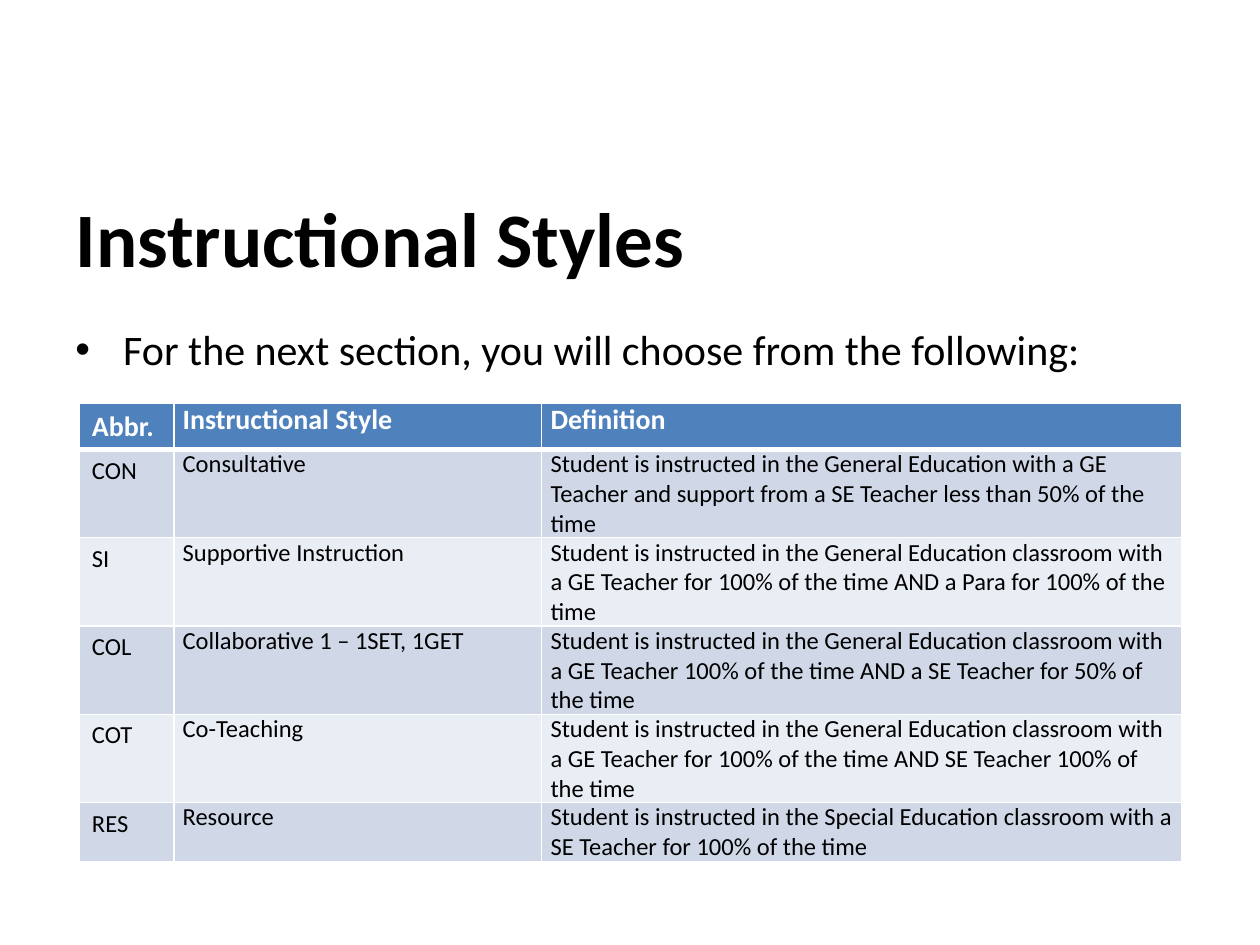
from lxml import etree
from pptx import Presentation
from pptx import util as u
from pptx.dml.color import RGBColor
from pptx.enum import text
from pptx.oxml import ns

HEADERS = ["Abbr.", "Instructional Style", "Definition"]
STYLES = [
    ("CON", "Consultative",
     "Student is instructed in the General Education with a GE Teacher "
     "and support from a SE Teacher less than 50% of the time"),
    ("SI", "Supportive Instruction",
     "Student is instructed in the General Education classroom with a GE Teacher "
     "for 100% of the time AND a Para for 100% of the time"),
    ("COL", "Collaborative 1 – 1SET, 1GET",
     "Student is instructed in the General Education classroom with a GE Teacher "
     "100% of the time AND a SE Teacher for 50% of the time"),
    ("COT", "Co-Teaching",
     "Student is instructed in the General Education classroom with a GE Teacher "
     "for 100% of the time AND SE Teacher 100% of the time"),
    ("RES", "Resource",
     "Student is instructed in the Special Education classroom with a SE Teacher "
     "for 100% of the time"),
]


def color(value):
    return RGBColor.from_string(value)


class StyledSlide:
    font = "Calibri"
    ink, paper = "000000", "FFFFFF"
    header_fill, bands = "4F81BD", ("D0D8E8", "E9EDF4")

    def __init__(self, deck):
        self.slide = deck.slides.add_slide(deck.slide_layouts[5])

    def add_run(self, para, words, size, ink=None, bold=False):
        span = para.add_run()
        span.text = words
        span.font.name = self.font
        span.font.size = u.Pt(size)
        span.font.bold = bold
        span.font.color.rgb = color(ink or self.ink)

    def title(self, words, left, top, width, height):
        box = self.slide.shapes.title
        box.left, box.top, box.width, box.height = map(
            u.Inches, (left, top, width, height))
        box.text_frame.vertical_anchor = text.MSO_ANCHOR.MIDDLE
        para = box.text_frame.paragraphs[0]
        para.alignment = text.PP_ALIGN.LEFT
        self.add_run(para, words, 44, bold=True)

    def bullet(self, words, left, top, width, height):
        box = self.slide.shapes.add_textbox(
            *map(u.Inches, (left, top, width, height)))
        box.text_frame.word_wrap = True
        para = box.text_frame.paragraphs[0]
        props = para._p.get_or_add_pPr()
        indent = u.Inches(0.38)
        props.set("marL", str(indent))
        props.set("indent", str(-indent))
        etree.SubElement(props, ns.qn("a:buFont")).set("typeface", "Arial")
        etree.SubElement(props, ns.qn("a:buChar")).set("char", "•")
        self.add_run(para, words, 24)

    def borders(self, cell, bottom):
        props = cell._tc.get_or_add_tcPr()
        widths = {"lnL": 1, "lnR": 1, "lnT": 1, "lnB": bottom}
        for place, (side, width) in enumerate(widths.items()):
            line = etree.Element(ns.qn("a:" + side), w=str(u.Pt(width)))
            fill = etree.SubElement(line, ns.qn("a:solidFill"))
            etree.SubElement(fill, ns.qn("a:srgbClr")).set("val", self.paper)
            props.insert(place, line)

    def cell(self, cell, words, row, column):
        header = row == 0
        if column:
            cell.margin_left = cell.margin_right = u.Inches(0.07)
            cell.margin_top = cell.margin_bottom = 0
        cell.fill.solid()
        cell.fill.fore_color.rgb = color(
            self.header_fill if header else self.bands[(row - 1) % 2])
        # The line under a cell is also the top line of the cell below
        self.borders(cell, bottom=3 if header else 1)
        if row == 1:
            cell._tc.tcPr.find(ns.qn("a:lnT")).set("w", str(u.Pt(3)))
        self.add_run(cell.text_frame.paragraphs[0], words, 16 if header else 14,
                     self.paper if header else self.ink, header)

    def table(self, rows, left, top, widths, heights):
        frame = self.slide.shapes.add_table(
            len(rows), len(widths),
            *map(u.Inches, (left, top, sum(widths), sum(heights))))
        table = frame.table
        for column, width in zip(table.columns, widths):
            column.width = u.Inches(width)
        for row, height in zip(table.rows, heights):
            row.height = u.Inches(height)
        for r, values in enumerate(rows):
            for c, words in enumerate(values):
                self.cell(table.cell(r, c), words, r, c)


def main():
    deck = Presentation()
    deck.slide_width, deck.slide_height = u.Inches(10), u.Inches(7.5)
    page = StyledSlide(deck)

    # Heading and lead-in
    page.title("Instructional Styles", 0.5, 1.5, 9, 0.75)
    page.bullet("For the next section, you will choose from the following:",
                0.5, 2.52, 9, 0.55)

    # Table of styles; rows grow to fit their text
    page.table([HEADERS, *STYLES], 0.63, 3.2,
               widths=[0.75, 2.92, 5.08], heights=[0.34] * 5 + [0.41])

    deck.save("out.pptx")


if __name__ == "__main__":
    main()
